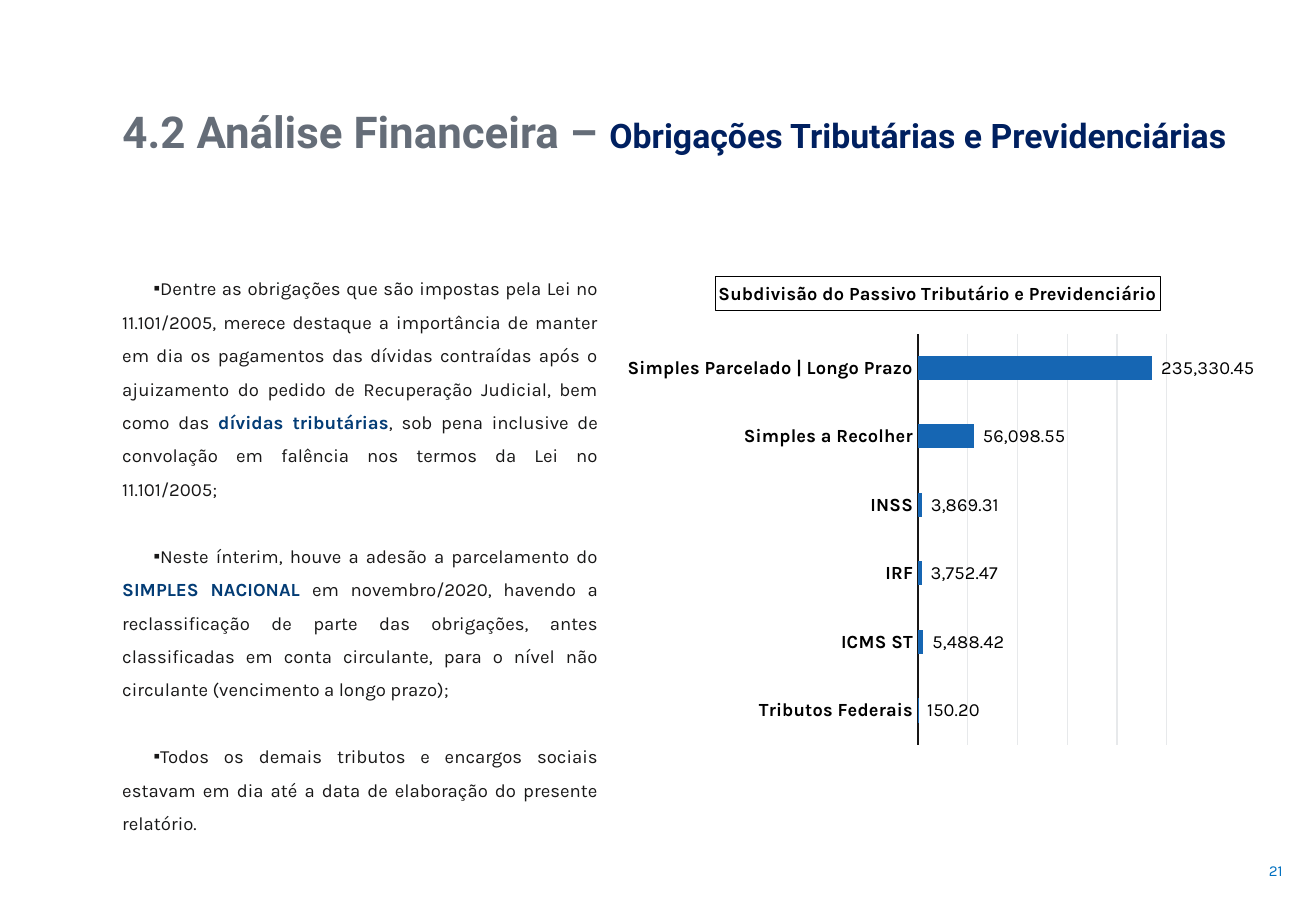
"""Build a slide on tax and social security liabilities with a bar chart."""
import pptx
import pptx.chart.data
import pptx.dml.color
import pptx.enum.chart
import pptx.enum.text
import pptx.oxml
import pptx.oxml.ns
import pptx.util

PX = 7620
HUES = {"grey": "656D78", "navy": "002060", "ink": "181717", "deep": "033C75",
        "page": "0070C0", "black": "000000", "bar": "1666B3", "grid": "E7E9EB"}
FORM = r'_(* #,##0.00_);_(* \(#,##0.00\);_(* "-"??_);_(@_)'
ALIGN = pptx.enum.text.PP_ALIGN
HEAD = [("4.2 Análise Financeira – ", 26, "grey"),
        ("Obrigações Tributárias e Previdenciárias", 20, "navy")]
BODY = [
    [("Dentre as obrigações que são impostas pela Lei nº 11.101/2005, merece "
      "destaque a importância de manter em dia os pagamentos das dívidas "
      "contraídas após o ajuizamento do pedido de Recuperação Judicial, bem "
      "como das ", False),
     ("dívidas tributárias", True),
     (", sob pena inclusive de convolação em falência nos termos da Lei "
      "nº 11.101/2005;", False)],
    [("Neste ínterim, houve a adesão a parcelamento do ", False),
     ("SIMPLES NACIONAL ", True),
     ("em novembro/2020, havendo a reclassificação de parte das obrigações, "
      "antes classificadas em conta circulante, para o nível não circulante "
      "(vencimento a longo prazo);", False)],
    [("Todos os demais tributos e encargos sociais estavam em dia até a data "
      "de elaboração do presente relatório.", False)],
]
DEBTS = [("Tributos Federais", 150.20), ("ICMS ST", 5488.42),
         ("IRF", 3752.47), ("INSS", 3869.31),
         ("Simples a Recolher", 56098.55),
         ("Simples Parcelado | Longo Prazo", 235330.45)]


def hue(name):
    """Return a named colour."""
    return pptx.dml.color.RGBColor.from_string(HUES[name])


def place(*sides):
    """Turn px lengths into EMU."""
    return [side * PX for side in sides]


def style(font, size, name, bold=False, face="Karla"):
    """Set size, colour, weight and face of a font."""
    font.size = pptx.util.Pt(size)
    font.bold = bold
    font.name = face
    font.color.rgb = hue(name)


def add_head(slide):
    """Fill and place the title."""
    head = slide.shapes.title
    head.left, head.top, head.width, head.height = place(109, 97, 1165, 65)
    frame = head.text_frame
    frame.auto_size = pptx.enum.text.MSO_AUTO_SIZE.NONE
    frame.vertical_anchor = pptx.enum.text.MSO_ANCHOR.TOP
    par = frame.paragraphs[0]
    par.alignment = ALIGN.LEFT
    for text, size, name in HEAD:
        run = par.add_run()
        run.text = text
        style(run.font, size, name, True, "Roboto")


def add_box(slide, *sides):
    """Add a wrapping text box and return its frame."""
    frame = slide.shapes.add_textbox(*place(*sides)).text_frame
    frame.word_wrap = True
    return frame


def add_mark(par):
    """Give a paragraph a square bullet with an indented first line."""
    props = par._p.get_or_add_pPr()
    props.set("marL", "0")
    props.set("indent", str(31 * PX))
    space = pptx.oxml.ns.nsdecls("a")
    props.append(pptx.oxml.parse_xml(f'<a:buFont {space} typeface="Arial"/>'))
    props.append(pptx.oxml.parse_xml(f'<a:buChar {space} char="▪"/>'))


def add_body(slide):
    """Add the bulleted text."""
    frame = add_box(slide, 109, 257, 494, 475)
    for rank, parts in enumerate(BODY):
        par = frame.add_paragraph() if rank else frame.paragraphs[0]
        add_mark(par)
        par.alignment = ALIGN.JUSTIFY
        par.line_spacing = 1.5
        if rank:
            par.space_before = pptx.util.Pt(19.8)
        style(par.font, 11, "ink")
        for text, strong in parts:
            run = par.add_run()
            run.text = text
            style(run.font, 11, "deep" if strong else "ink", strong)


def add_page(slide):
    """Add the page number."""
    frame = add_box(slide, 1184, 830, 95, 60)
    frame.vertical_anchor = pptx.enum.text.MSO_ANCHOR.MIDDLE
    par = frame.paragraphs[0]
    par.text = "21"
    par.alignment = ALIGN.RIGHT
    style(par.font, 9, "page")


def set_line(line, name):
    """Draw a thin line in a named colour."""
    line.color.rgb = hue(name)
    line.width = pptx.util.Pt(0.75)


def set_plot(chart):
    """Fix the inner plot area within the chart."""
    area = chart._chartSpace.chart.plotArea
    for old in area.findall(pptx.oxml.ns.qn("c:layout")):
        area.remove(old)
    spots = "".join(f'<c:{tag} val="{val}"/>' for tag, val in [
        ("layoutTarget", "inner"), ("xMode", "edge"), ("yMode", "edge"),
        ("x", 0.468), ("y", 0.144), ("w", 0.416), ("h", 0.806)])
    space = pptx.oxml.ns.nsdecls("c")
    area.insert(0, pptx.oxml.parse_xml(
        f"<c:layout {space}><c:manualLayout>{spots}</c:manualLayout></c:layout>"))


def add_bars(slide):
    """Add the bar chart of debts."""
    data = pptx.chart.data.CategoryChartData(number_format=FORM)
    names, sums = zip(*DEBTS)
    data.categories = names
    data.add_series("Series 1", sums)
    kind = pptx.enum.chart.XL_CHART_TYPE.BAR_CLUSTERED
    chart = slide.shapes.add_chart(kind, *place(620, 257, 624, 504), data).chart
    style(chart.font, 11, "black")
    chart.has_legend = False

    title = chart.chart_title
    par = title.text_frame.paragraphs[0]
    par.text = "Subdivisão do Passivo Tributário e Previdenciário"
    style(par.font, 11, "black", True)
    set_line(title.format.line, "black")

    axis = chart.category_axis
    axis.major_tick_mark = pptx.enum.chart.XL_TICK_MARK.NONE
    style(axis.tick_labels.font, 11, "black", True)
    set_line(axis.format.line, "ink")
    scale = chart.value_axis
    scale.visible = False
    scale.minimum_scale = 0
    scale.maximum_scale = 258863.5
    scale.major_unit = 50000
    set_line(scale.major_gridlines.format.line, "grid")

    plot = chart.plots[0]
    plot.gap_width = 182
    plot.vary_by_categories = False
    bars = plot.series[0]
    bars.format.fill.solid()
    bars.format.fill.fore_color.rgb = hue("bar")
    tags = bars.data_labels
    tags.show_value = True
    tags.position = pptx.enum.chart.XL_LABEL_POSITION.OUTSIDE_END
    tags.number_format = FORM
    tags.number_format_is_linked = False
    style(tags.font, 11, "black")
    set_plot(chart)


def main():
    """Build and save the slide."""
    deck = pptx.Presentation()
    deck.slide_width, deck.slide_height = place(1300, 900)
    slide = deck.slides.add_slide(deck.slide_layouts[5])
    add_page(slide)
    add_head(slide)
    add_body(slide)
    add_bars(slide)
    deck.save("out.pptx")


if __name__ == "__main__":
    main()
